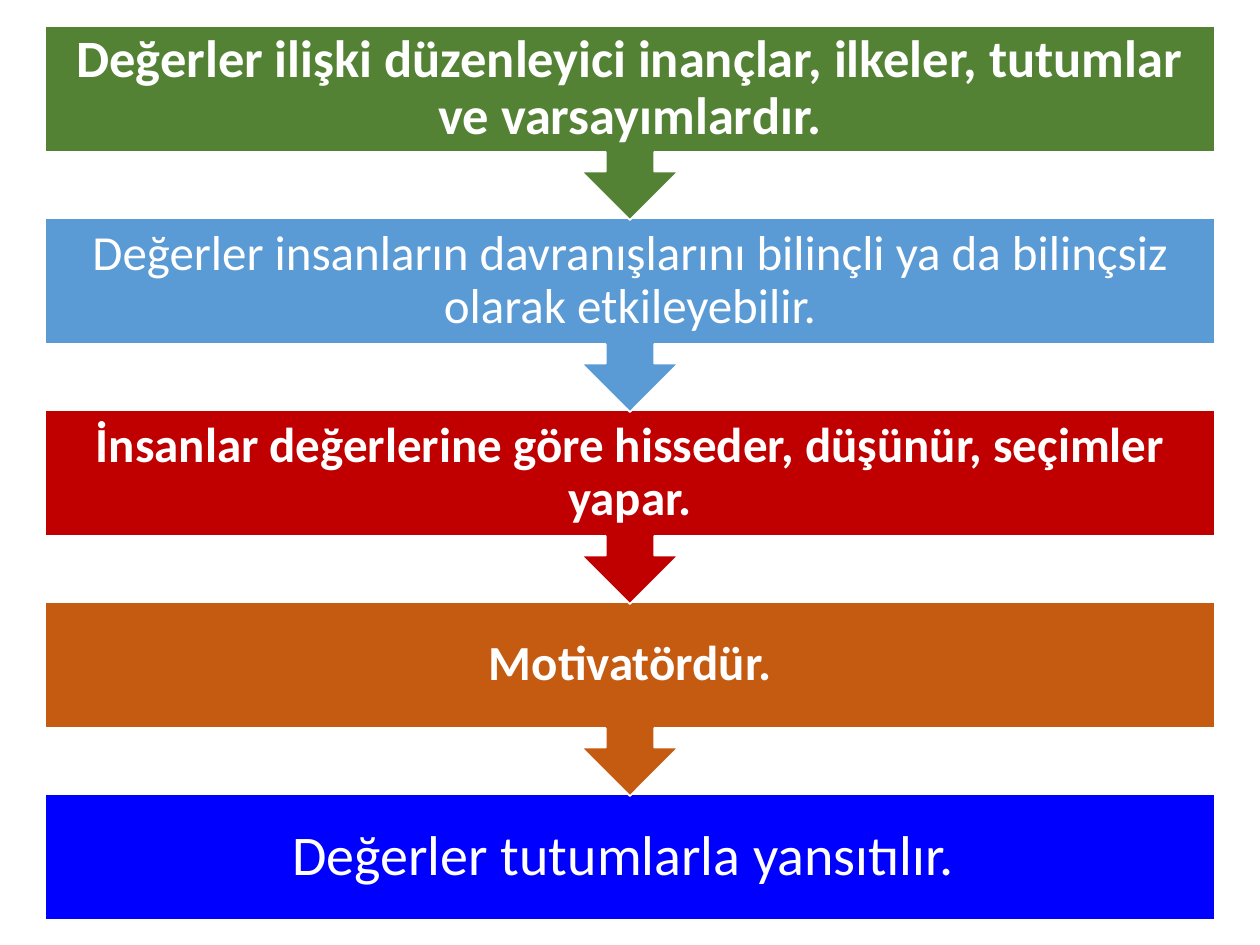
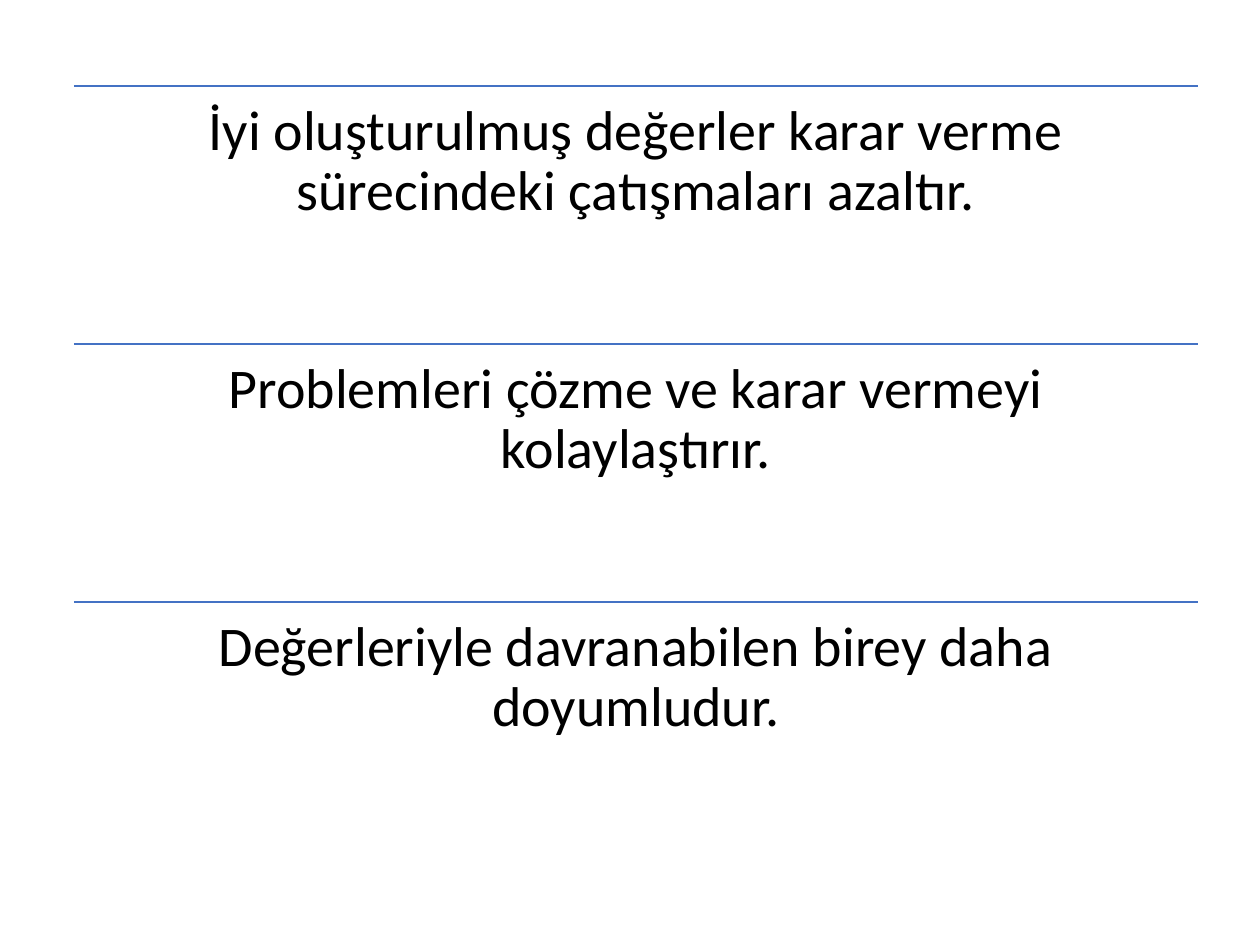
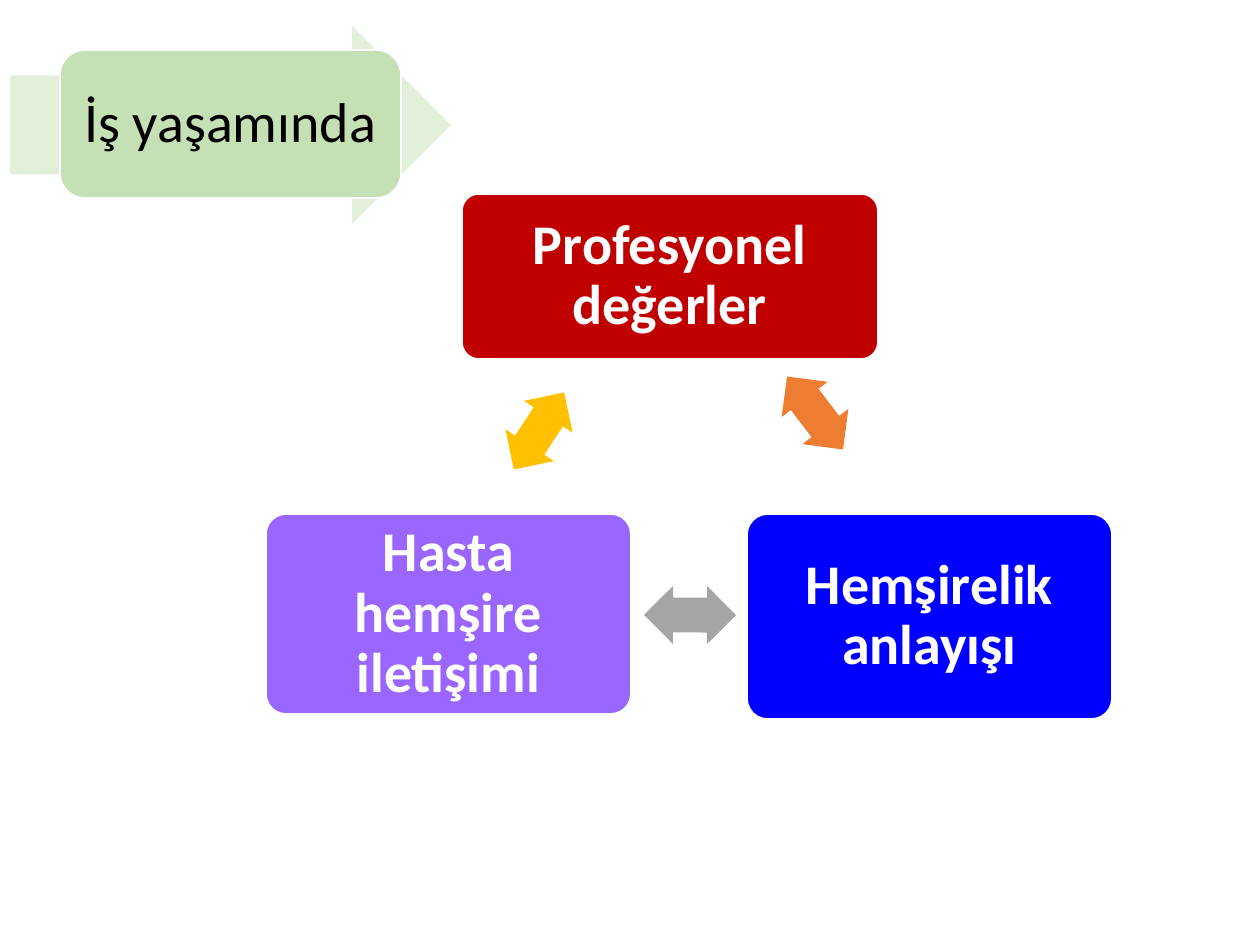
import pptx
import pptx.util
import pptx.dml.color
import pptx.enum.shapes
import pptx.enum.text
import pptx.oxml.ns
import lxml.etree

RGB = pptx.dml.color.RGBColor
SHAPE = pptx.enum.shapes.MSO_SHAPE
ANCHOR = pptx.enum.text.MSO_ANCHOR

WHITE = RGB(0xFF, 0xFF, 0xFF)
BLACK = RGB(0x00, 0x00, 0x00)
GREEN = RGB(0x54, 0x82, 0x35)
SKY = RGB(0x5B, 0x9B, 0xD5)
RED = RGB(0xC0, 0x00, 0x00)
RUST = RGB(0xC5, 0x5A, 0x11)
BLUE = RGB(0x00, 0x00, 0xFF)
RULE = RGB(0x44, 0x72, 0xC4)
PURPLE = RGB(0x99, 0x66, 0xFF)
ORANGE = RGB(0xED, 0x7D, 0x31)
GREY = RGB(0xA5, 0xA5, 0xA5)
GOLD = RGB(0xFF, 0xC0, 0x00)
PALE_GREEN = RGB(0xE2, 0xF0, 0xD9)
LIGHT_GREEN = RGB(0xC5, 0xE0, 0xB4)

FONT = "Calibri"
PX_PER_INCH = 126


def px(n):
    return pptx.util.Emu(round(n * 914400 / PX_PER_INCH))


def set_text(sp, text, size, color, bold=False, anchor=ANCHOR.MIDDLE, side=16, top=0):
    tf = sp.text_frame
    tf.word_wrap = True
    tf.vertical_anchor = anchor
    tf.margin_left = tf.margin_right = px(side)
    tf.margin_top = tf.margin_bottom = px(top)
    p = tf.paragraphs[0]
    p.text = text
    p.alignment = pptx.enum.text.PP_ALIGN.CENTER
    p.line_spacing = 0.9
    f = p.runs[0].font
    f.name = FONT
    f.size = pptx.util.Pt(size)
    f.bold = bold
    f.color.rgb = color


def add_block(s, kind, box, fill, outlined=True):
    sp = s.shapes.add_shape(kind, *map(px, box))
    sp.shadow.inherit = False
    sp.fill.solid()
    sp.fill.fore_color.rgb = fill
    if outlined:
        sp.line.color.rgb = WHITE
        sp.line.width = pptx.util.Pt(1)
    else:
        sp.line.fill.background()
    return sp


def add_rule(s, x, y, w):
    c = s.shapes.add_connector(
        pptx.enum.shapes.MSO_CONNECTOR.STRAIGHT, px(x), px(y), px(x + w), px(y))
    c.line.color.rgb = RULE
    c.line.width = pptx.util.Pt(1)
    sp_pr = c.element.find(pptx.oxml.ns.qn("p:spPr"))
    lxml.etree.SubElement(sp_pr, pptx.oxml.ns.qn("a:effectLst"))


def add_step_chain(s, box, steps):
    x, y, w, h = box
    body_h, callout_h = 126, 194
    pitch = (h - body_h) // (len(steps) - 1)
    last = len(steps) - 1
    for i, (text, fill, size, bold) in reversed(list(enumerate(steps))):
        kind = SHAPE.RECTANGLE if i == last else SHAPE.DOWN_ARROW_CALLOUT
        height = body_h if i == last else callout_h
        sp = add_block(s, kind, (x, y + i * pitch, w, height), fill)
        set_text(sp, text, size, WHITE, bold, side=28)


def add_ruled_list(s, box, items):
    x, y, w, h = box
    row_h = h // len(items)
    for i, text in enumerate(items):
        top = y + i * row_h
        add_rule(s, x, top, w)
        sp = s.shapes.add_textbox(*map(px, (x, top, w, row_h)))
        set_text(sp, text, 32, BLACK, anchor=ANCHOR.TOP, top=16)


def add_cycle(s, box, nodes, arrows):
    x, y, w, h = box
    for text, fill, (dx, dy, nw, nh) in nodes:
        sp = add_block(s, SHAPE.ROUNDED_RECTANGLE, (x + dx, y + dy, nw, nh), fill)
        sp.adjustments[0] = 0.1
        set_text(sp, text, 32, WHITE, True)
    for fill, dx, dy, angle in arrows:
        sp = add_block(s, SHAPE.LEFT_RIGHT_ARROW, (x + dx, y + dy, 92, 58), fill, False)
        sp.adjustments[0] = 0.6
        sp.adjustments[1] = 0.5
        sp.rotation = angle


def add_arrow_label(s, box, text):
    x, y, w, h = box
    add_block(s, SHAPE.RIGHT_ARROW, box, PALE_GREEN, False)
    sp = add_block(s, SHAPE.ROUNDED_RECTANGLE,
                   (x + 50, y + h // 8, w - 100, h * 3 // 4), LIGHT_GREEN)
    set_text(sp, text, 32, BLACK)


STEPS = [
    ("Değerler ilişki düzenleyici inançlar, ilkeler, tutumlar ve varsayımlardır.",
     GREEN, 30, True),
    ("Değerler insanların davranışlarını bilinçli ya da bilinçsiz olarak etkileyebilir.",
     SKY, 28, False),
    ("İnsanlar değerlerine göre hisseder, düşünür, seçimler yapar.", RED, 28, True),
    ("Motivatördür.", RUST, 28, True),
    ("Değerler tutumlarla yansıtılır. ", BLUE, 32, False),
]
BENEFITS = [
    "İyi oluşturulmuş değerler karar verme sürecindeki çatışmaları azaltır.",
    "Problemleri çözme ve karar vermeyi kolaylaştırır.",
    "Değerleriyle davranabilen birey daha doyumludur.",
]
NODES = [
    ("Profesyonel değerler", RED, (196, 0, 416, 165)),
    ("Hemşirelik anlayışı", BLUE, (481, 320, 365, 205)),
    ("Hasta hemşire iletişimi", PURPLE, (0, 320, 365, 200)),
]
ARROWS = [
    (ORANGE, 503, 190, 52.5),
    (GREY, 378, 392, 180.3),
    (GOLD, 227, 208, 303.2),
]


def main():
    prs = pptx.Presentation()
    prs.slide_width, prs.slide_height = px(1260), px(945)
    blank = prs.slide_layouts[6]
    add_step_chain(prs.slides.add_slide(blank), (45, 26, 1170, 894), STEPS)
    add_ruled_list(prs.slides.add_slide(blank), (74, 86, 1124, 774), BENEFITS)
    s = prs.slides.add_slide(blank)
    add_cycle(s, (266, 194, 846, 525), NODES, ARROWS)
    add_arrow_label(s, (10, 26, 441, 198), "İş yaşamında")
    prs.save("out.pptx")


if __name__ == "__main__":
    main()
